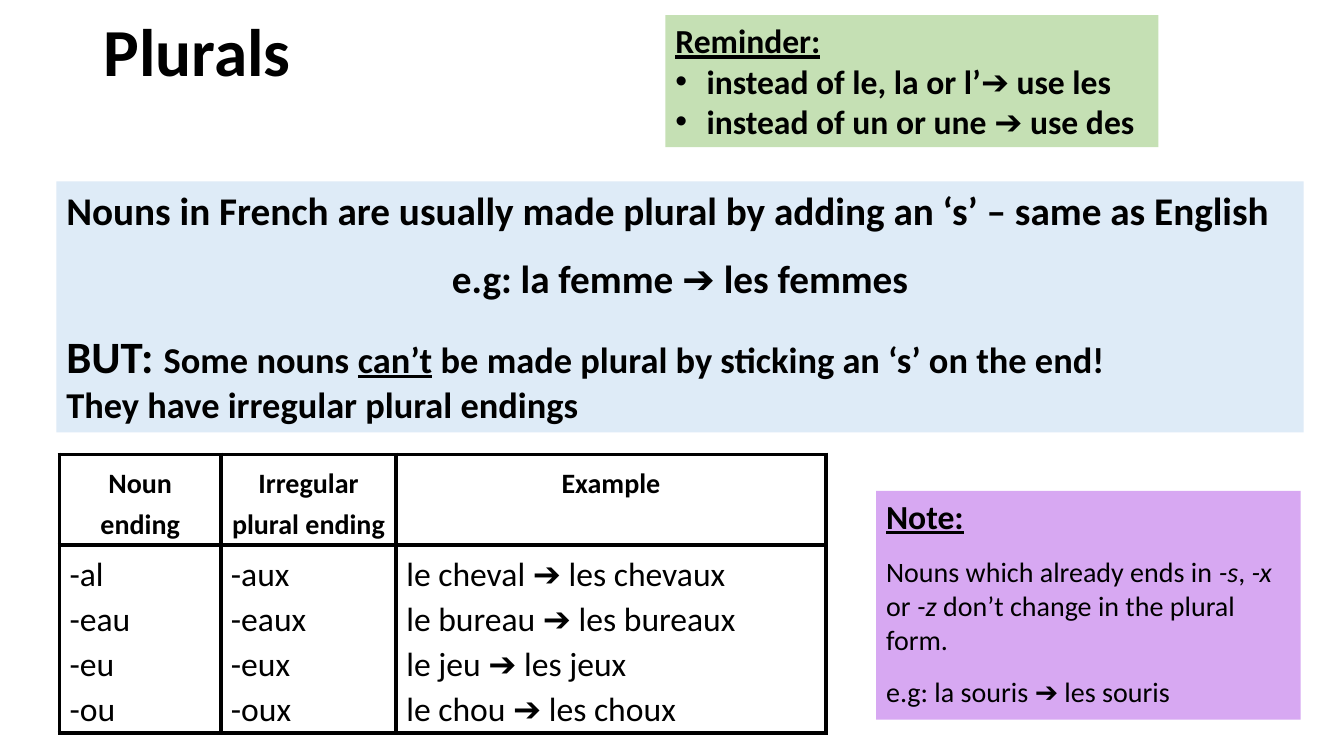
from lxml.etree import SubElement
from pptx import Presentation
from pptx.dml.color import RGBColor
from pptx.enum.text import MSO_ANCHOR, MSO_AUTO_SIZE, PP_ALIGN
from pptx.oxml.ns import qn
from pptx.util import Pt

PX = 9144  # 100 px to the inch
COLORS = {"ink": "000000", "reminder": "C5E0B4", "rule": "DEEBF7", "note": "D7A8F2"}
BULLET_INDENT = 31 * PX
BORDER = Pt(3)


def write(frame, paragraphs, **base):
    """Fill a text frame from (paragraph format, [(text, font format), ...]) pairs."""
    for index, (layout, spans) in enumerate(paragraphs):
        para = frame.add_paragraph() if index else frame.paragraphs[0]
        for name, value in layout.items():
            setattr(para, name, value)
        for text, changes in spans:
            span = para.add_run()
            span.text = text
            span.font.name = "Calibri"
            span.font.color.rgb = RGBColor.from_string(COLORS["ink"])
            for name, value in (base | changes).items():
                setattr(span.font, name, value)


def add_box(left, top, width, height, fill=None, wrap=True):
    box = page.shapes.add_textbox(left * PX, top * PX, width * PX, height * PX)
    box.text_frame.word_wrap = wrap
    if fill:
        box.fill.solid()
        box.fill.fore_color.rgb = RGBColor.from_string(COLORS[fill])
        box.text_frame.auto_size = MSO_AUTO_SIZE.SHAPE_TO_FIT_TEXT
    return box.text_frame


deck = Presentation()
deck.slide_width, deck.slide_height = 1333 * PX, 750 * PX
page = deck.slides.add_slide(deck.slide_layouts[6])

# Title
title = add_box(93, 0, 430, 109)
title.vertical_anchor = MSO_ANCHOR.MIDDLE
write(title, [({"line_spacing": 0.9}, [("Plurals", {})])], size=Pt(48), bold=True)

# Reminder
reminder = add_box(660, 15, 489, 131, "reminder", wrap=False)
write(reminder, [
    ({}, [("Reminder:", {"underline": True})]),
    ({}, [("instead of le, la or l’➔ use les", {})]),
    ({}, [("instead of un or une ➔ use des", {})]),
], size=Pt(24), bold=True)
for para in reminder.paragraphs[1:]:
    properties = para._p.get_or_add_pPr()
    properties.set("marL", str(BULLET_INDENT))
    properties.set("indent", str(-BULLET_INDENT))
    SubElement(properties, qn("a:buFont")).set("typeface", "Arial")
    SubElement(properties, qn("a:buChar")).set("char", "•")

# Main rule
large, medium = {"size": Pt(32)}, {"size": Pt(26)}
write(add_box(56, 180, 1237, 249, "rule"), [
    ({}, [("Nouns in French are usually made plural by adding an ‘s’ – same as English", {})]),
    ({"alignment": PP_ALIGN.CENTER, "space_before": Pt(14.6)},
     [("e.g: la femme ➔ les femmes", {})]),
    ({"space_before": Pt(19.5)}, [
        ("BUT: ", large),
        ("Some nouns ", medium),
        ("can’t", medium | {"underline": True}),
        (" be made plural by sticking an ‘s’ on the end!", medium),
    ]),
    ({}, [("They have irregular plural endings", medium)]),
], size=Pt(28), bold=True)

# Irregular endings
columns = [
    (160, "Noun ending", ["-al", "-eau", "-eu", "-ou"]),
    (174, "Irregular plural ending", ["-aux", "-eaux", "-eux", "-oux"]),
    (426, "Example", ["le cheval ➔ les chevaux", "le bureau ➔ les bureaux",
                      "le jeu ➔ les jeux", "le chou ➔ les choux"]),
]
endings = page.shapes.add_table(2, 3, 59 * PX, 451 * PX, 760 * PX, 276 * PX).table
endings.first_row = endings.horz_banding = False
for row, height in zip(endings.rows, (90, 186)):
    row.height = height * PX
for index, (width, heading, examples) in enumerate(columns):
    endings.columns[index].width = width * PX
    write(endings.cell(0, index).text_frame,
          [({"alignment": PP_ALIGN.CENTER, "line_spacing": 1.2}, [(heading, {})])],
          size=Pt(20), bold=True)
    write(endings.cell(1, index).text_frame,
          [({"line_spacing": 1.1}, [(example, {})]) for example in examples],
          size=Pt(24), bold=False)
for cell in endings.iter_cells():
    properties = cell._tc.get_or_add_tcPr()
    for side in ("lnL", "lnR", "lnT", "lnB"):
        line = SubElement(properties, qn(f"a:{side}"), w=str(BORDER))
        solid = SubElement(line, qn("a:solidFill"))
        SubElement(solid, qn("a:srgbClr"), val=COLORS["ink"])
    cell.fill.background()

# Note
italic = {"italic": True}
write(add_box(869, 487, 421, 227, "note"), [
    ({}, [("Note:", {"size": Pt(24), "bold": True, "underline": True})]),
    ({"space_before": Pt(13.4)}, [
        ("Nouns which already ends in ", {}),
        ("-s", italic),
        (", ", {}),
        ("-x ", italic),
        ("or ", {}),
        ("-z ", italic),
        ("don’t change in the plural form.", {}),
    ]),
    ({"space_before": Pt(13.4)}, [("e.g: la souris ➔ les souris", {})]),
], size=Pt(20))

deck.save("out.pptx")
